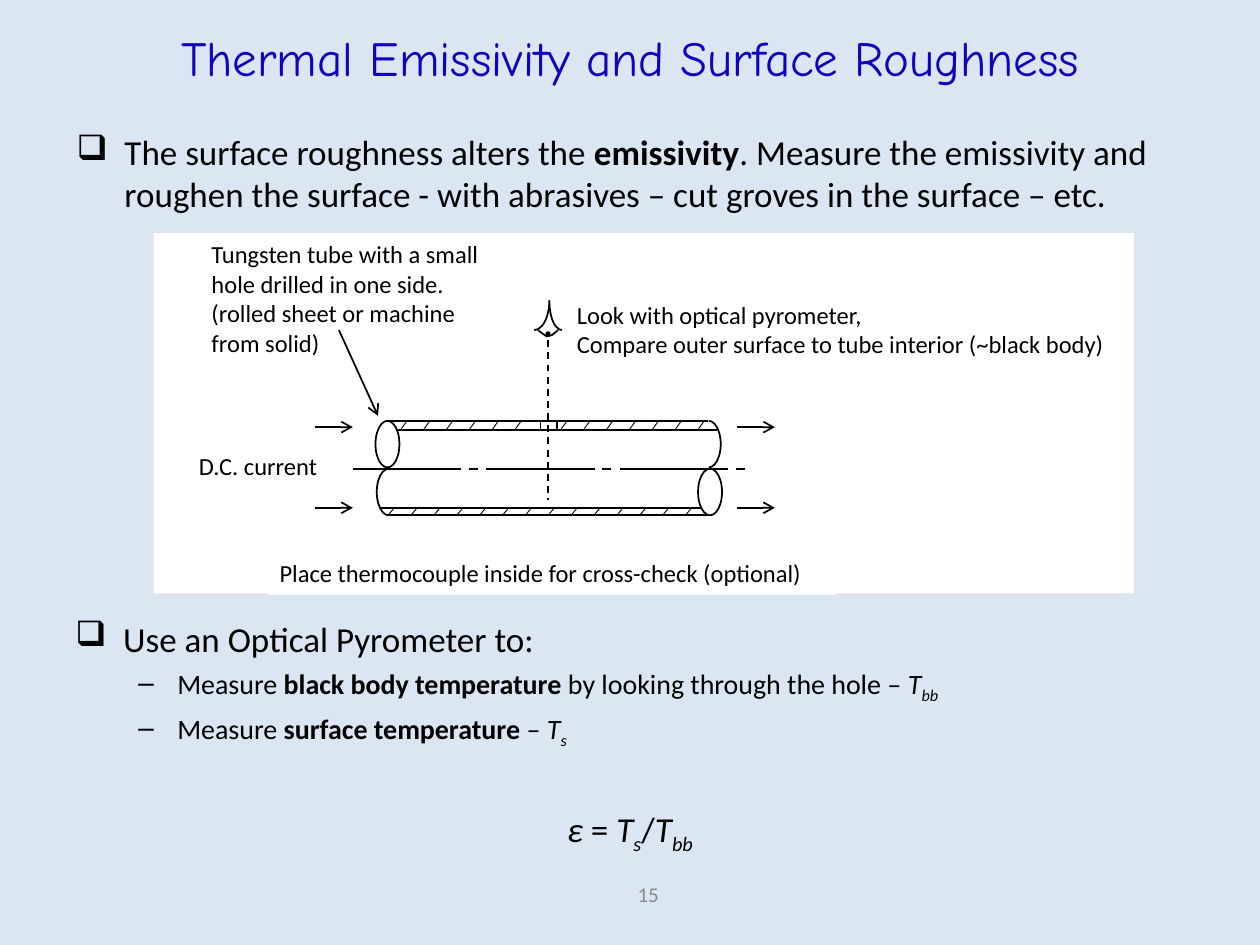
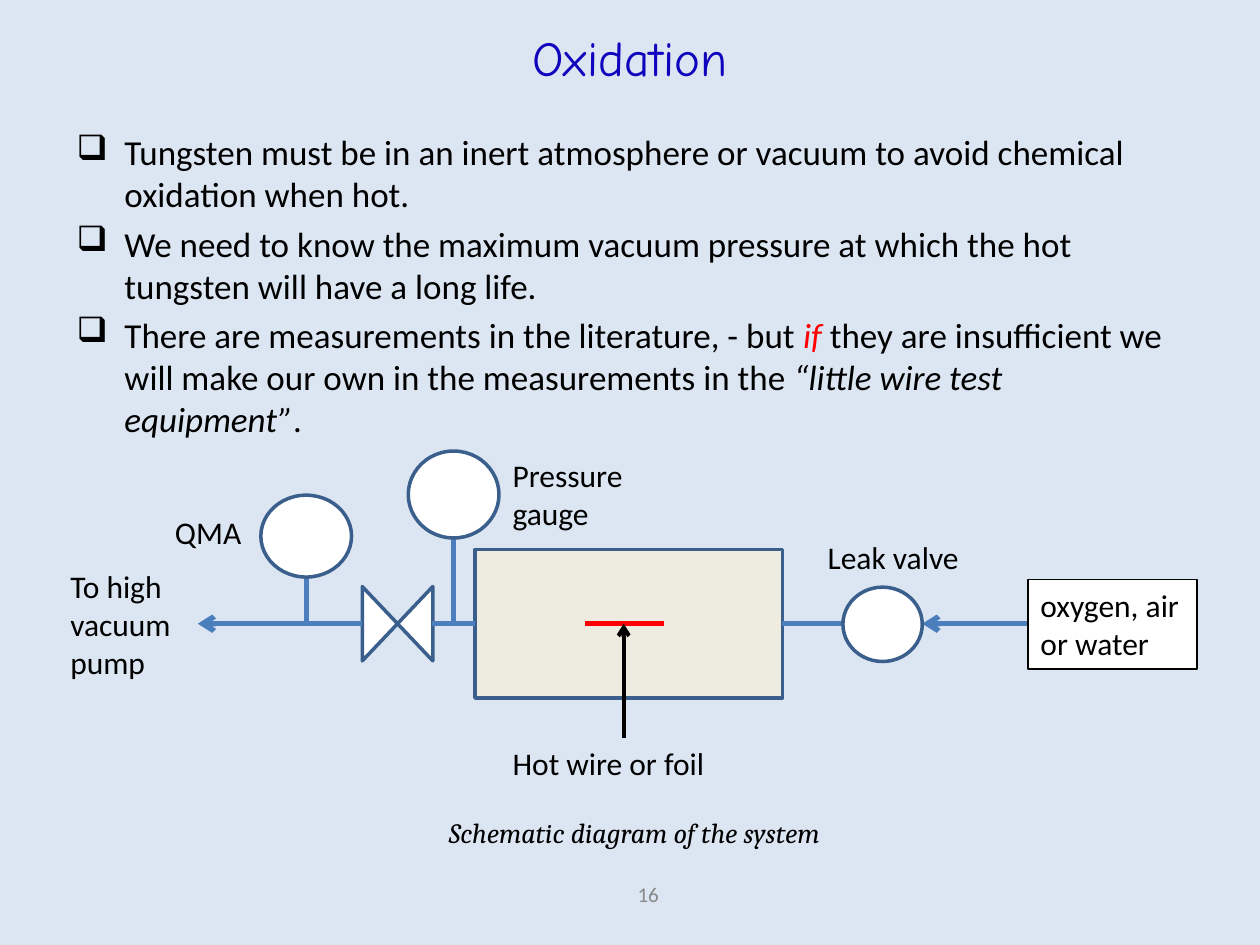
from lxml import etree
from pptx import Presentation
from pptx.dml.color import RGBColor
from pptx.enum.dml import MSO_LINE
from pptx.enum.shapes import MSO_CONNECTOR, MSO_SHAPE
from pptx.enum.text import MSO_ANCHOR, PP_ALIGN
from pptx.oxml.ns import qn
from pptx.util import Inches, Pt

BLACK = RGBColor(0, 0, 0)
WHITE = RGBColor(255, 255, 255)
RED = RGBColor(255, 0, 0)
PALE_BLUE = RGBColor(0xDC, 0xE6, 0xF2)
TITLE_BLUE = RGBColor(0x10, 0x03, 0xBD)
GRAY = RGBColor(0x89, 0x89, 0x89)
OUTLINE_BLUE = RGBColor(0x3A, 0x5F, 0x8C)
PIPE_BLUE = RGBColor(0x4B, 0x7E, 0xBC)
CREAM = RGBColor(0xEE, 0xEC, 0xE1)

RECTANGLE, OVAL = MSO_SHAPE.RECTANGLE, MSO_SHAPE.OVAL
TRIANGLE, ARC = MSO_SHAPE.ISOSCELES_TRIANGLE, MSO_SHAPE.ARC
STRAIGHT, DASH = MSO_CONNECTOR.STRAIGHT, MSO_LINE.DASH
MIDDLE, CENTER = MSO_ANCHOR.MIDDLE, PP_ALIGN.CENTER

TITLE_ONLY = 5
BODY_FONT = "Calibri"
BOLD = {"bold": True}
ITALIC = {"italic": True}
SUBSCRIPT = {"italic": True, "subscript": True}


def write(para, text, size=20, font=BODY_FONT, color=BLACK,
          bold=False, italic=False, subscript=False):
    span = para.add_run()
    span.text = text
    span.font.size = Pt(size)
    span.font.name = font
    span.font.color.rgb = color
    span.font.bold = bold
    span.font.italic = italic
    if subscript:
        span.font._element.set("baseline", "-25000")


def write_spans(para, spans, **style):
    """Write plain strings and (text, format) pairs into one paragraph."""
    for span in spans:
        text, extra = (span, {}) if isinstance(span, str) else span
        write(para, text, **{**style, **extra})


def set_bullet(para, symbol, left, hanging):
    properties = para._p.get_or_add_pPr()
    properties.set("marL", str(Inches(left)))
    properties.set("indent", str(-Inches(hanging)))
    etree.SubElement(properties, qn("a:buChar")).set("char", symbol)


class SlideBuilder:
    """Holds the deck style and the slide being drawn."""

    def __init__(self, first_number):
        self.deck = Presentation()
        self.deck.slide_width, self.deck.slide_height = Inches(10), Inches(7.5)
        background = self.deck.slide_master.background.fill
        background.solid()
        background.fore_color.rgb = PALE_BLUE
        self.number = first_number
        self.page = None

    def start_page(self, title):
        self.page = self.deck.slides.add_slide(
            self.deck.slide_layouts[TITLE_ONLY])
        box = self.page.shapes.title
        box.left, box.top = Inches(0), Inches(0)
        box.width, box.height = Inches(10), Inches(0.91)
        box.text_frame.vertical_anchor = MIDDLE
        para = box.text_frame.paragraphs[0]
        para.alignment = CENTER
        write(para, title, size=28, font="Comic Neue", color=TITLE_BLUE)
        number = self.label(str(self.number), 3.98, 6.9, 2.33, 0.4,
                            align=CENTER, size=12, color=GRAY)
        number.text_frame.vertical_anchor = MIDDLE
        self.number += 1

    def text_box(self, left, top, width, height):
        box = self.page.shapes.add_textbox(
            Inches(left), Inches(top), Inches(width), Inches(height))
        box.text_frame.word_wrap = True
        return box

    def label(self, text, left, top, width, height, align=None, fill=None,
              **style):
        box = self.text_box(left, top, width, height)
        if fill is not None:
            box.fill.solid()
            box.fill.fore_color.rgb = fill
        for index, line in enumerate(text.split("\n")):
            frame = box.text_frame
            para = frame.add_paragraph() if index else frame.paragraphs[0]
            para.alignment = align
            write(para, line, **style)
        return box

    def bullets(self, left, top, height, points):
        """Write (level, spans) points and return the text frame."""
        frame = self.text_box(left, top, 9, height).text_frame
        for index, (level, spans) in enumerate(points):
            para = frame.add_paragraph() if index else frame.paragraphs[0]
            para.level = level
            para.space_before = Pt(4)
            if level:
                set_bullet(para, "–", 0.81, 0.31)
            else:
                set_bullet(para, "❑", 0.38, 0.38)
            write_spans(para, spans, size=16 if level else 20)
        return frame

    def paint(self, shape, fill, line, weight):
        shape.shadow.inherit = False
        shape.fill.solid()
        shape.fill.fore_color.rgb = fill
        if line is None:
            shape.line.fill.background()
        else:
            shape.line.color.rgb = line
            shape.line.width = Pt(weight)

    def shape(self, kind, left, top, width, height, fill=WHITE, line=BLACK,
              weight=1, rotation=0):
        shape = self.page.shapes.add_shape(
            kind, Inches(left), Inches(top), Inches(width), Inches(height))
        shape.rotation = rotation
        self.paint(shape, fill, line, weight)
        return shape

    def arc(self, left, top, width, height, start, end):
        """Draw an arc clockwise between two angles in degrees."""
        arc = self.shape(ARC, left, top, width, height)
        arc.adjustments[0] = start * 0.6
        arc.adjustments[1] = end * 0.6

    def outline(self, points):
        points = [(Inches(x), Inches(y)) for x, y in points]
        builder = self.page.shapes.build_freeform(*points[0])
        builder.add_line_segments(points[1:], close=False)
        self.paint(builder.convert_to_shape(), WHITE, BLACK, 1)

    def line(self, x1, y1, x2, y2, color=BLACK, weight=1, arrow=False,
             dash=None):
        line = self.page.shapes.add_connector(
            STRAIGHT, Inches(x1), Inches(y1), Inches(x2), Inches(y2))
        line.line.color.rgb = color
        line.line.width = Pt(weight)
        if dash is not None:
            line.line.dash_style = dash
        properties = line._element.spPr
        if arrow:
            tail = etree.SubElement(properties.find(qn("a:ln")),
                                    qn("a:tailEnd"))
            tail.set("type", "arrow")
        etree.SubElement(properties, qn("a:effectLst"))


def draw_eye(builder):
    builder.arc(4.36, 2.15, 0.2, 0.47, 90, 180)
    builder.arc(4.12, 2.15, 0.24, 0.47, 0, 90)
    builder.outline([(4.43, 2.62), (4.38, 2.66), (4.34, 2.67),
                     (4.31, 2.65), (4.27, 2.62)])
    builder.shape(OVAL, 4.33, 2.63, 0.04, 0.04, fill=BLACK, line=None)
    builder.line(4.35, 2.7, 4.35, 3.97, dash=DASH)


def draw_tube(builder):
    end_width, end_height = 0.19, 0.37
    builder.shape(OVAL, 5.54, 3.72, end_width, end_height)
    builder.arc(5.53, 3.34, end_width, end_height, 270, 90)
    builder.shape(OVAL, 2.98, 3.34, end_width, end_height)
    builder.arc(2.99, 3.72, end_width, end_height, 90, 270)

    for start, end, y in ((3.09, 5.62, 3.34), (3.15, 5.69, 3.41),
                          (3.02, 5.56, 4.03), (3.09, 5.62, 4.09)):
        builder.line(start, y, end, y)
    for hole_side in (4.29, 4.42):
        builder.line(hole_side, 3.34, hole_side, 3.41)

    for segment in range(3):
        x = 2.8 + 1.06 * segment
        builder.line(x, 3.72, x + 0.86, 3.72)
        builder.line(x + 0.92, 3.72, x + 0.99, 3.72)

    hole_index = 6
    for index in range(14):
        offset = 2.36 * index / 13
        if index != hole_index:
            builder.line(3.23 + offset, 3.34, 3.18 + offset, 3.41, weight=0.5)
        builder.line(3.13 + offset, 4.03, 3.08 + offset, 4.09, weight=0.5)

    for x in (2.5, 5.85):
        for y in (3.39, 4.03):
            builder.line(x, y, x + 0.3, y, arrow=True)


def build_emissivity(builder):
    builder.start_page("Thermal Emissivity and Surface Roughness")
    builder.bullets(0.51, 0.99, 0.95, [
        (0, ["The surface roughness alters the ", ("emissivity", BOLD),
             ". Measure the emissivity and roughen the surface - with "
             "abrasives – cut groves in the surface – etc."])])

    builder.shape(RECTANGLE, 1.22, 1.85, 7.78, 2.86, line=None)
    draw_eye(builder)
    for text, *place in (
            ("Look with optical pyrometer,\nCompare outer surface to tube "
             "interior (~black body)", 4.48, 2.33, 4.52, 0.57),
            ("Tungsten tube with a small hole drilled in one side.\n"
             "(rolled sheet or machine from solid)", 1.58, 1.85, 2.45, 1.04),
            ("D.C. current", 1.48, 3.53, 1.14, 0.34),
            ("Place thermocouple inside for cross-check (optional)",
             2.12, 4.38, 4.52, 0.34)):
        builder.label(text, *place, fill=WHITE, size=14)
    builder.line(2.69, 2.62, 3, 3.3, arrow=True)
    draw_tube(builder)

    frame = builder.bullets(0.5, 4.85, 2.05, [
        (0, ["Use an Optical Pyrometer to:"]),
        (1, ["Measure ", ("black body temperature ", BOLD),
             "by looking through the hole – ", ("T", ITALIC),
             ("bb", SUBSCRIPT)]),
        (1, ["Measure ", ("surface temperature ", BOLD), "– ",
             ("T", ITALIC), ("s", SUBSCRIPT)])])
    formula = frame.add_paragraph()
    formula.alignment = CENTER
    formula.space_before = Pt(33)
    write_spans(formula, [("ε ", ITALIC), "= ", ("T", ITALIC),
                          ("s", SUBSCRIPT), "/", ("T", ITALIC),
                          ("bb", SUBSCRIPT)])


def build_oxidation(builder):
    builder.start_page("Oxidation")
    builder.bullets(0.51, 0.99, 0.95, [
        (0, ["Tungsten must be in an inert atmosphere or vacuum to avoid "
             "chemical oxidation when hot."]),
        (0, ["We need to know the maximum vacuum pressure at which the hot "
             "tungsten will have a long life."]),
        (0, ["There are measurements in the literature, - but ",
             ("if", {"italic": True, "color": RED}),
             " they are insufficient we will make our own in the "
             "measurements in the ",
             ("“little wire test equipment”", ITALIC), "."])])

    part = {"line": OUTLINE_BLUE, "weight": 2}
    pipe = {"color": PIPE_BLUE, "weight": 3}
    pipe_y = 4.95
    builder.shape(RECTANGLE, 3.77, 4.36, 2.44, 1.18, fill=CREAM, **part)
    builder.line(4.64, pipe_y, 5.27, pipe_y, color=RED, weight=3)
    for left, rotation in ((3, 270), (2.72, 90)):
        builder.shape(TRIANGLE, left, 4.81, 0.59, 0.28, rotation=rotation,
                      **part)

    for start, end, arrow in ((3.43, 3.77, False), (6.21, 6.69, False),
                              (8.16, 7.32, True), (2.87, 1.57, True)):
        builder.line(start, pipe_y, end, pipe_y, arrow=arrow, **pipe)
    for x, gauge_bottom in ((3.6, 4.21), (2.43, 4.58)):
        builder.line(x, pipe_y, x, gauge_bottom, **pipe)
    for place in ((6.69, 4.66, 0.63, 0.59), (3.24, 3.58, 0.72, 0.69),
                  (2.07, 3.93, 0.72, 0.65)):
        builder.shape(OVAL, *place, **part)
    builder.line(4.95, 5.86, 4.95, pipe_y, weight=2.25, arrow=True)

    for text, *place in (("Hot wire or foil", 3.97, 5.86, 1.97, 0.4),
                         ("Pressure gauge", 3.97, 3.57, 1.3, 0.71),
                         ("To high vacuum pump", 0.46, 4.45, 1.1, 1.01),
                         ("QMA", 1.29, 4.02, 0.75, 0.4),
                         ("Leak valve", 6.47, 4.22, 1.29, 0.4)):
        builder.label(text, *place, size=18)
    supply = builder.label("oxygen, air or water", 8.16, 4.6, 1.34, 0.71,
                           fill=WHITE, size=18)
    supply.line.color.rgb = BLACK
    supply.line.width = Pt(0.75)
    builder.label("Schematic diagram of the system", 0.42, 6.42, 9.23, 0.37,
                  align=CENTER, size=16, font="Cambria", italic=True)


def main():
    builder = SlideBuilder(first_number=15)
    build_emissivity(builder)
    build_oxidation(builder)
    builder.deck.save("out.pptx")


if __name__ == "__main__":
    main()
